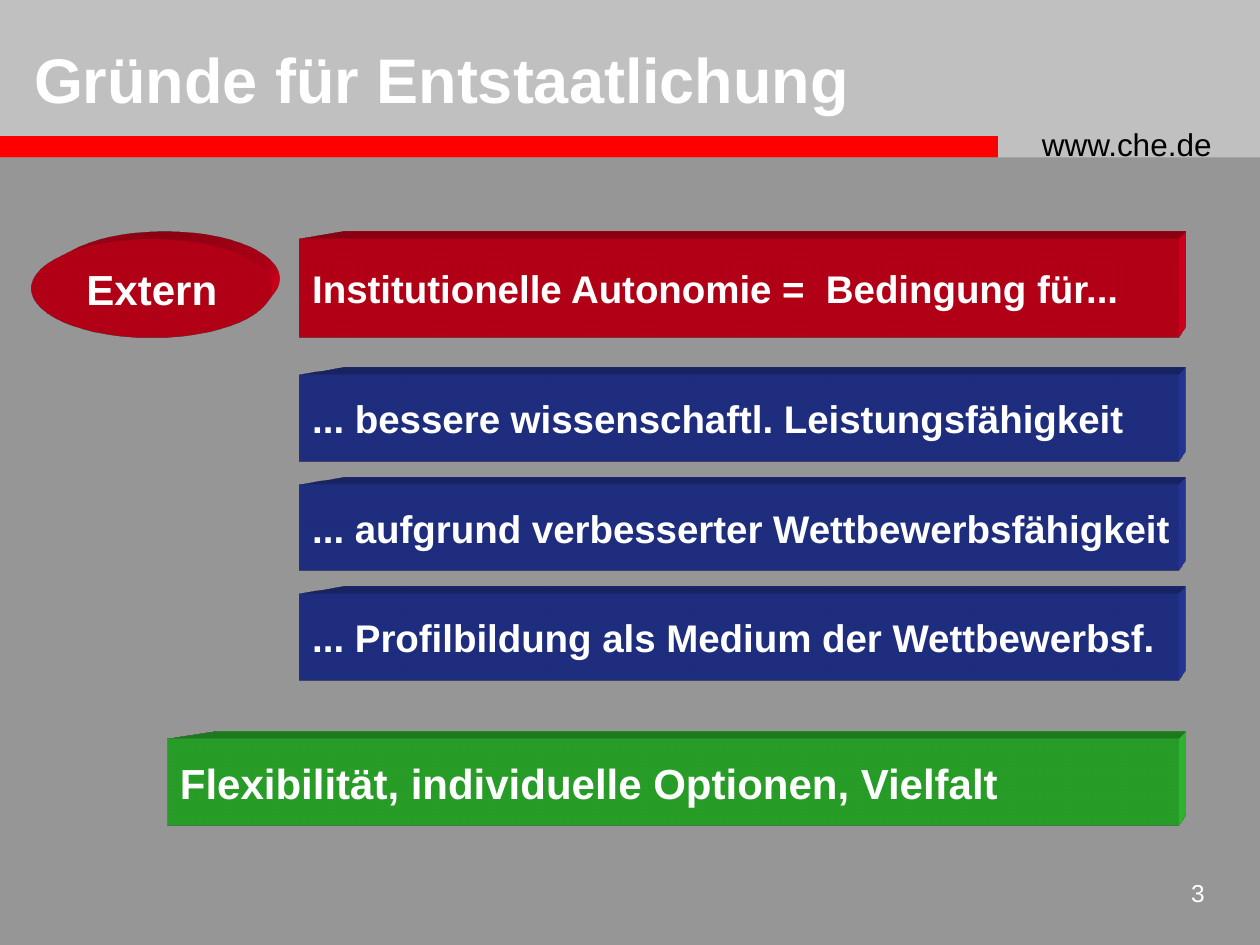
import lxml.etree
import pptx
import pptx.dml.color
import pptx.enum.shapes
import pptx.enum.text
import pptx.oxml
import pptx.oxml.ns
import pptx.util

Inches = pptx.util.Inches
SHAPE = pptx.enum.shapes.MSO_SHAPE
ALIGN = pptx.enum.text.PP_ALIGN
ANCHOR = pptx.enum.text.MSO_ANCHOR

TITLE = "Gründe für Entstaatlichung"
ADDRESS = "www.che.de"
PAGE = "3"
BADGE = ("Extern", (0.25, 1.9, 1.91, 0.78))
# text, left, top, height, colour, size
BARS = [
    ("Institutionelle Autonomie =  Bedingung für...", 2.38, 1.9, 0.78, "red", "bar"),
    ("... bessere wissenschaftl. Leistungsfähigkeit", 2.38, 2.98, 0.68, "blue", "bar"),
    ("... aufgrund verbesserter Wettbewerbsfähigkeit", 2.38, 3.85, 0.68, "blue", "bar"),
    ("... Profilbildung als Medium der Wettbewerbsf.", 2.38, 4.72, 0.68, "blue", "bar"),
    ("Flexibilität, individuelle Optionen, Vielfalt", 1.33, 5.87, 0.68, "green", "large"),
]
BAR_RIGHT = 9.35

THEME = {
    "font": "Arial",
    "sizes": {"title": 36, "large": 24, "bar": 22, "address": 18, "page": 14},
    "background": "969696", "header": "C0C0C0", "rule": "FF0000",
    "light": "FFFFFF", "dark": "000000",
    "red": "E8001E", "blue": "293BA5", "green": "33CC33",
}
EXTRUSION_DEPTH = 430200


def rgb(value):
    return pptx.dml.color.RGBColor.from_string(value)


def add_block(slide, kind, box, color):
    shape = slide.shapes.add_shape(kind, *map(Inches, box))
    shape.shadow.inherit = False
    shape.fill.solid()
    shape.fill.fore_color.rgb = rgb(color)
    shape.line.fill.background()
    return shape


def extrude(shape, color):
    """Give the shape depth towards the upper right, in perspective."""
    namespace = pptx.oxml.ns.nsdecls("a")
    scene = f"""<a:scene3d {namespace}>
      <a:camera prst="legacyPerspectiveTopRight"/>
      <a:lightRig rig="legacyFlat3" dir="b"/>
    </a:scene3d>"""
    solid = f"""<a:sp3d {namespace} extrusionH="{EXTRUSION_DEPTH}" prstMaterial="legacyMatte">
      <a:bevelT w="13500" h="13500" prst="angle"/>
      <a:bevelB w="13500" h="13500" prst="angle"/>
      <a:extrusionClr><a:srgbClr val="{color}"/></a:extrusionClr>
    </a:sp3d>"""
    properties = shape.element.spPr
    for xml in (scene, solid):
        properties.append(pptx.oxml.parse_xml(xml))


def write(shape, text, *, size, color=THEME["light"], bold=False,
          align=ALIGN.LEFT, anchor=ANCHOR.MIDDLE, wrap=False):
    frame = shape.text_frame
    frame.word_wrap = wrap
    frame.auto_size = pptx.enum.text.MSO_AUTO_SIZE.NONE
    frame.vertical_anchor = anchor
    frame.margin_left = frame.margin_right = Inches(0.1)
    frame.margin_top = frame.margin_bottom = Inches(0.05)
    paragraph = frame.paragraphs[0]
    paragraph.text = text
    paragraph.alignment = align
    font = paragraph.font
    font.name = THEME["font"]
    font.size = pptx.util.Pt(THEME["sizes"][size])
    font.bold = bold
    font.color.rgb = rgb(color)


def add_solid(slide, kind, box, palette, text, **text_format):
    shape = add_block(slide, kind, box, THEME[palette])
    extrude(shape, THEME[palette])
    write(shape, text, bold=True, **text_format)


def main():
    presentation = pptx.Presentation()
    presentation.slide_width, presentation.slide_height = Inches(10), Inches(7.5)
    slide = presentation.slides.add_slide(presentation.slide_layouts[5])
    slide.background.fill.solid()
    slide.background.fill.fore_color.rgb = rgb(THEME["background"])

    add_block(slide, SHAPE.RECTANGLE, (0, 0, 10, 1.25), THEME["header"])
    add_block(slide, SHAPE.RECTANGLE, (-0.01, 1.08, 7.93, 0.17), THEME["rule"])

    address = slide.shapes.add_textbox(*map(Inches, (8.17, 0.94, 1.75, 0.4)))
    write(address, ADDRESS, size="address", color=THEME["dark"],
          anchor=ANCHOR.TOP, wrap=True)
    page = slide.shapes.add_textbox(*map(Inches, (9.08, 6.92, 0.58, 0.42)))
    write(page, PAGE, size="page", align=ALIGN.RIGHT, anchor=ANCHOR.TOP, wrap=True)

    title = slide.shapes.title
    title.left, title.top, title.width, title.height = map(Inches, (0.17, 0.25, 7.29, 0.75))
    write(title, TITLE, size="title", bold=True, wrap=True)
    slide.shapes.element.append(title.element)  # bring in front of the header

    for text, left, top, height, palette, size in BARS:
        box = (left, top, BAR_RIGHT - left, height)
        add_solid(slide, SHAPE.RECTANGLE, box, palette, text, size=size)

    text, box = BADGE
    add_solid(slide, SHAPE.OVAL, box, "red", text, size="large", align=ALIGN.CENTER)

    presentation.save("out.pptx")


if __name__ == "__main__":
    main()
